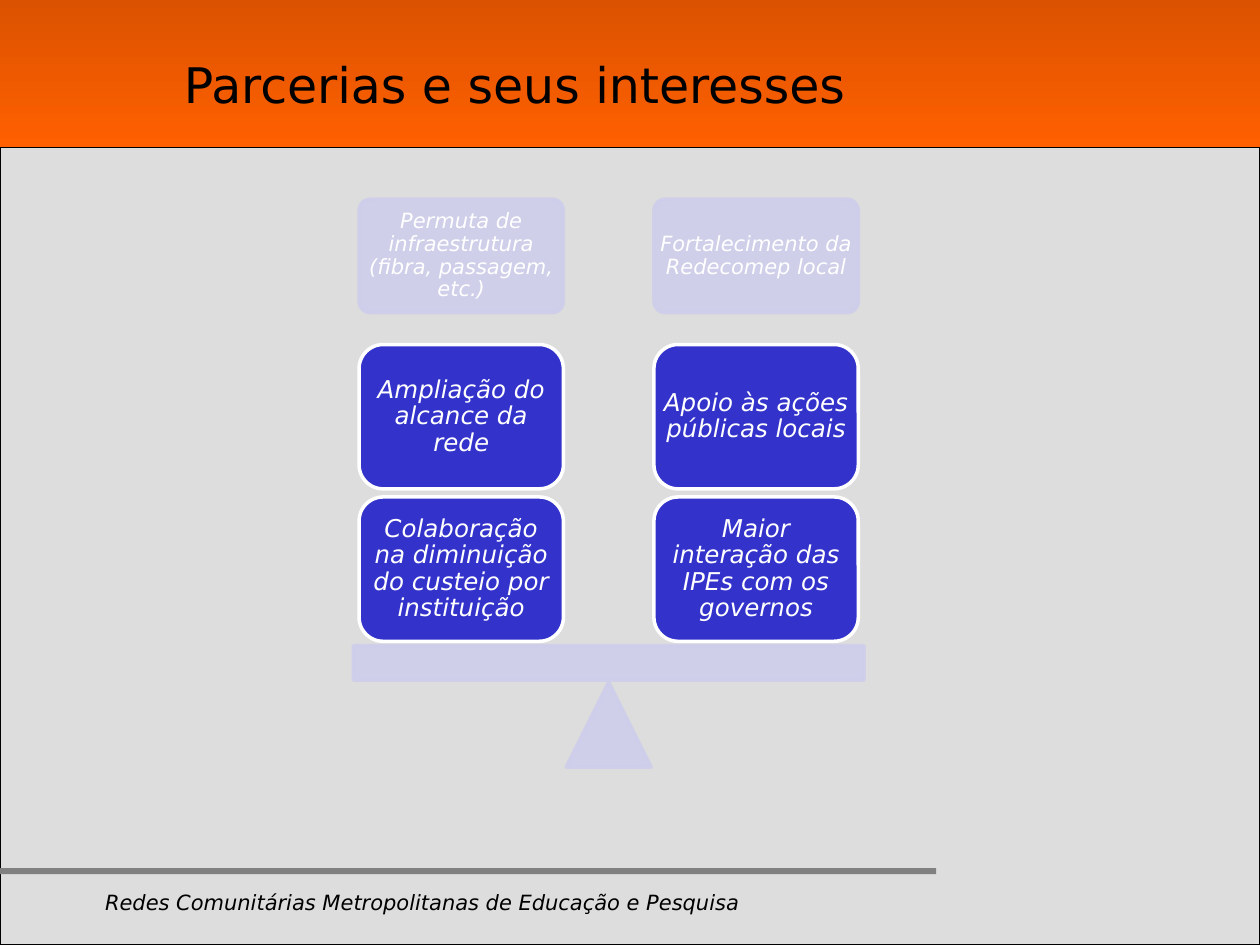
from lxml import etree
from pptx import Presentation
from pptx.dml.color import RGBColor
from pptx.enum.shapes import MSO_SHAPE
from pptx.enum.text import MSO_ANCHOR, PP_ALIGN
from pptx.oxml.ns import qn
from pptx.util import Pt

FONT = "DejaVu Sans"
PALE, BLUE, WHITE, BLACK = "CECEEC", "3333CC", "FFFFFF", "000000"
COLUMNS = [
    (205.2, ["Permuta de infraestrutura (fibra, passagem, etc.)",
             "Ampliação do alcance da rede",
             "Colaboração na diminuição do custeio por instituição"]),
    (373.7, ["Fortalecimento da Redecomep local",
             "Apoio às ações públicas locais",
             "Maior interação das IPEs com os governos"]),
]
CARD_W, HEAD_TOP, HEAD_H = 116.8, 113.8, 64.9
CARD_TOP, CARD_H, CARD_STEP = 196.9, 82.5, 87.1


def rgb(color):
    return RGBColor.from_string(color)


def set_alpha(fill, percent):
    for clr in fill._xPr.iter(qn("a:srgbClr")):
        etree.SubElement(clr, qn("a:alpha")).set("val", str(percent * 1000))


def add_shape(s, kind, x, y, w, h, fill=None, line=None, width=0.75, alpha=None):
    sp = s.shapes.add_shape(kind, Pt(x), Pt(y), Pt(w), Pt(h))
    sp.shadow.inherit = False
    if fill:
        sp.fill.solid()
        sp.fill.fore_color.rgb = rgb(fill)
    if line:
        sp.line.color.rgb = rgb(line)
        sp.line.width = Pt(width)
    else:
        sp.line.fill.background()
    if alpha:
        set_alpha(sp.fill, alpha)
    return sp


def write(sp, text, size, color=BLACK, italic=False, align=PP_ALIGN.LEFT,
          anchor=MSO_ANCHOR.TOP, spacing=1.0, margins=(0, 0)):
    tf = sp.text_frame
    tf.word_wrap = True
    tf.vertical_anchor = anchor
    tf.margin_left = tf.margin_right = Pt(margins[0])
    tf.margin_top = tf.margin_bottom = Pt(margins[1])
    p = tf.paragraphs[0]
    p.alignment = align
    p.line_spacing = spacing
    r = p.add_run()
    r.text = text
    r.font.name = FONT
    r.font.size = Pt(size)
    r.font.italic = italic
    r.font.color.rgb = rgb(color)


def add_text(s, x, y, w, h, text, size, **fmt):
    write(s.shapes.add_textbox(Pt(x), Pt(y), Pt(w), Pt(h)), text, size, **fmt)


def add_pale(s, kind, x, y, w, h):
    return add_shape(s, kind, x, y, w, h, PALE, PALE, 2, alpha=90)


def write_card(sp, text, size, margin):
    write(sp, text, size, color=WHITE, italic=True, align=PP_ALIGN.CENTER,
          anchor=MSO_ANCHOR.MIDDLE, spacing=0.9, margins=(margin, margin))


def add_frame(s):
    """Page background, footer and title band."""
    add_shape(s, MSO_SHAPE.RECTANGLE, 0, 84, 720, 456, "DDDDDD", BLACK)
    add_shape(s, MSO_SHAPE.RECTANGLE, 0, 496, 535, 3.5, "808080")
    add_text(s, 60, 504, 588, 18.7,
             "Redes Comunitárias Metropolitanas de Educação e Pesquisa",
             12, italic=True, spacing=1.3)
    band = add_shape(s, MSO_SHAPE.RECTANGLE, 0, 0, 720, 84)
    band.fill.gradient()
    band.fill.gradient_angle = 270
    for stop, color, position in zip(band.fill.gradient_stops,
                                     ("DB5200", "FF6000"), (0, 1)):
        stop.color.rgb = rgb(color)
        stop.position = position
    add_text(s, 30, 10.8, 528, 74, "Parcerias e seus interesses", 28,
             align=PP_ALIGN.CENTER, anchor=MSO_ANCHOR.MIDDLE, margins=(7.2, 3.6))


def add_column(s, x, texts):
    head, *cards = texts
    sp = add_pale(s, MSO_SHAPE.ROUNDED_RECTANGLE, x, HEAD_TOP, CARD_W, HEAD_H)
    sp.adjustments[0] = 0.1
    write_card(sp, head, 12, 1.7)
    for i, text in enumerate(cards):
        sp = add_shape(s, MSO_SHAPE.ROUNDED_RECTANGLE, x, CARD_TOP + i * CARD_STEP,
                       CARD_W, CARD_H, BLUE, WHITE, 2)
        write_card(sp, text, 14, 0)


def main():
    prs = Presentation()
    prs.slide_width, prs.slide_height = Pt(720), Pt(540)
    s = prs.slides.add_slide(prs.slide_layouts[6])
    add_frame(s)
    add_pale(s, MSO_SHAPE.ISOSCELES_TRIANGLE, 323.5, 389.7, 48.6, 48.6)
    add_pale(s, MSO_SHAPE.RECTANGLE, 202, 368.9, 291.8, 19.7)
    for x, texts in COLUMNS:
        add_column(s, x, texts)
    prs.save("out.pptx")


if __name__ == "__main__":
    main()
